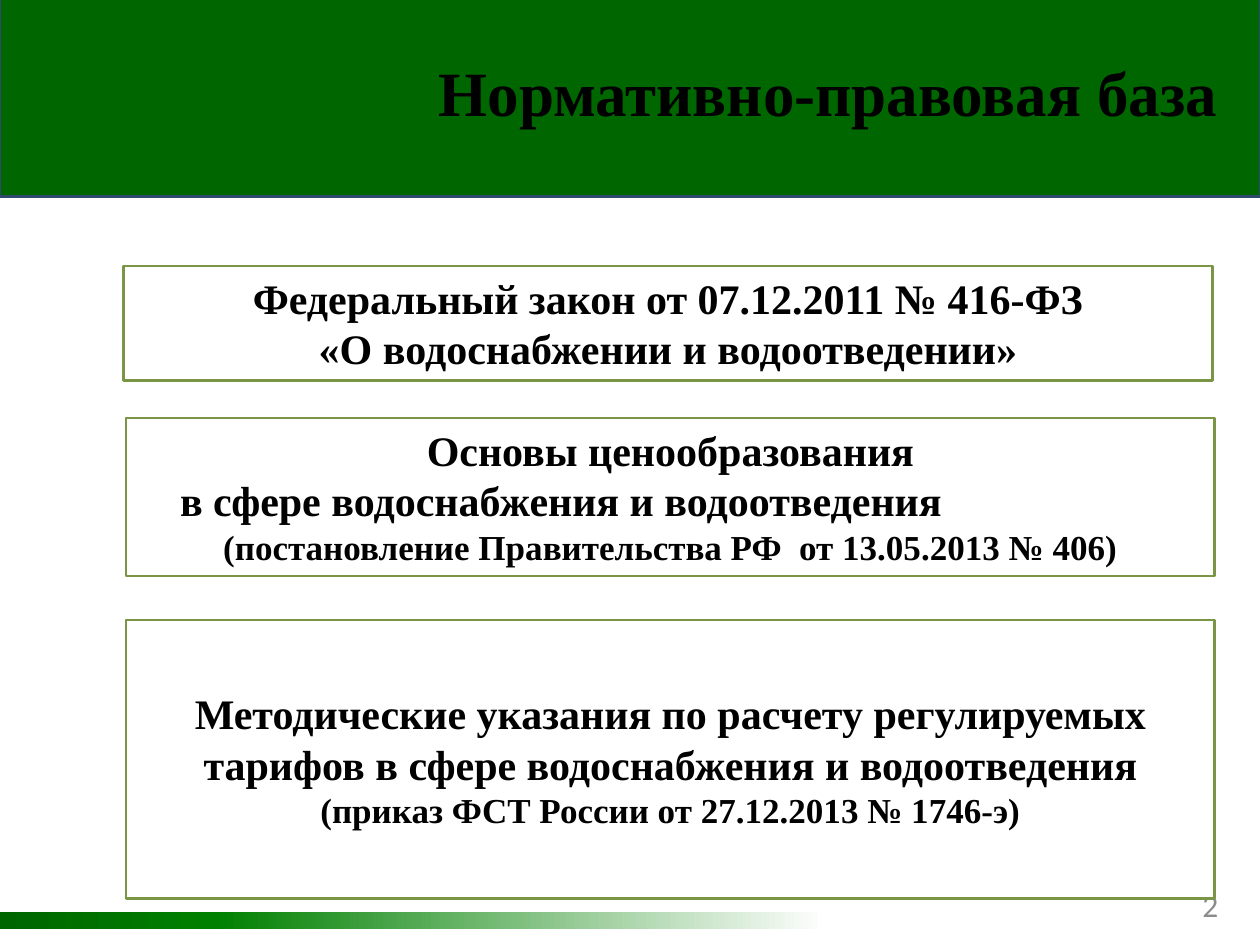
import copy

import pptx
import pptx.dml.color
import pptx.enum.shapes
import pptx.enum.text
import pptx.oxml.ns
import pptx.util

Cm, Pt = pptx.util.Cm, pptx.util.Pt
RGBColor = pptx.dml.color.RGBColor
ALIGN = pptx.enum.text.PP_ALIGN
ANCHOR = pptx.enum.text.MSO_ANCHOR

BLACK = RGBColor(0x00, 0x00, 0x00)
WHITE = RGBColor(0xFF, 0xFF, 0xFF)
GREY = RGBColor(0x8C, 0x8C, 0x8C)
DARK_GREEN = RGBColor(0x00, 0x66, 0x00)
GREEN = RGBColor(0x00, 0x80, 0x00)
OLIVE = RGBColor(0x7B, 0x95, 0x47)
NAVY = RGBColor(0x2E, 0x4B, 0x6F)

SERIF = {"name": "Times New Roman", "bold": True}
TITLE = {**SERIF, "size": Pt(36)}
MAIN = {**SERIF, "size": Pt(24)}
SOURCE = {**SERIF, "size": Pt(20)}
NUMBER = {"name": "Calibri", "size": Pt(18), "bold": False}

# Each act: box in cm, anchor, paragraphs of (indent in cm or None, runs)
ACTS = [
    ((2.54, 8.43, 21.95, 3.18), ANCHOR.TOP, [
        (None, [("Основы ценообразования", MAIN)]),
        (0.84, [("в сфере водоснабжения и водоотведения", MAIN)]),
        (None, [("(постановление Правительства РФ  от 13.05.2013 № 406)", SOURCE)]),
    ]),
    ((2.49, 5.36, 21.95, 2.31), ANCHOR.TOP, [
        (None, [("Федеральный закон от 07.12.2011 № 416-ФЗ", MAIN)]),
        (None, [("«О водоснабжении и водоотведении»", MAIN)]),
    ]),
    ((2.54, 12.5, 21.95, 5.61), ANCHOR.MIDDLE, [
        (None, [("Методические указания по расчету регулируемых тарифов "
                 "в сфере водоснабжения и водоотведения ", MAIN),
                ("(приказ ФСТ России от 27.12.2013 № 1746-э)", SOURCE)]),
    ]),
]


def add_run(paragraph, text, font, color=BLACK):
    run = paragraph.add_run()
    run.text = text
    for key, value in font.items():
        setattr(run.font, key, value)
    run.font.color.rgb = color


def add_panel(slide, box, fill, outline=None):
    """Add a flat rectangle, outlined only when a colour is given."""
    panel = slide.shapes.add_shape(
        pptx.enum.shapes.MSO_SHAPE.RECTANGLE, *map(Cm, box))
    panel.shadow.inherit = False
    panel.fill.solid()
    panel.fill.fore_color.rgb = fill
    if outline is None:
        panel.line.fill.background()
    else:
        panel.line.color.rgb = outline
        panel.line.width = Pt(1.5)
    return panel


def add_header(slide, box):
    """Place the green band with the title over its right part."""
    left, top, width, height = box
    add_panel(slide, box, DARK_GREEN, NAVY)
    title = slide.shapes.title
    title.left, title.top = Cm(left + 7.29), Cm(top + 0.82)
    title.width, title.height = Cm(18.8), Cm(2.21)
    frame = title.text_frame
    frame.word_wrap = True
    frame.vertical_anchor = ANCHOR.MIDDLE
    frame.paragraphs[0].alignment = ALIGN.CENTER
    add_run(frame.paragraphs[0], "Нормативно-правовая база", TITLE)
    title.element.getparent().append(title.element)  # in front of the band


def add_footer(slide, box):
    """Place the fading strip and the slide number."""
    left, top, width, height = box
    strip = add_panel(slide, (left, top + 0.66, 16.69, 0.33), DARK_GREEN)
    strip.fill.gradient()
    strip.fill.gradient_angle = 0
    first, last = strip.fill.gradient_stops
    first.color.rgb, last.color.rgb = GREEN, WHITE
    stops = strip.element.spPr.find(".//" + pptx.oxml.ns.qn("a:gsLst"))
    stops.insert(1, copy.deepcopy(stops[0]))
    first.color.rgb = DARK_GREEN
    strip.fill.gradient_stops[1].position = 0.26

    number = slide.shapes.add_textbox(
        Cm(left + width - 2.11), Cm(top), Cm(1.52), Cm(height))
    frame = number.text_frame
    frame.word_wrap = True
    frame.vertical_anchor = ANCHOR.MIDDLE
    frame.paragraphs[0].alignment = ALIGN.RIGHT
    add_run(frame.paragraphs[0], "2", NUMBER, GREY)


def add_act(slide, box, anchor, paragraphs):
    frame = add_panel(slide, box, WHITE, OLIVE).text_frame
    frame.word_wrap = True
    frame.vertical_anchor = anchor
    for index, (indent, runs) in enumerate(paragraphs):
        paragraph = frame.add_paragraph() if index else frame.paragraphs[0]
        paragraph.alignment = ALIGN.CENTER
        if indent is not None:
            paragraph.alignment = ALIGN.LEFT
            paragraph._p.get_or_add_pPr().set("marL", str(Cm(indent)))
        for text, font in runs:
            add_run(paragraph, text, font)


def main():
    deck = pptx.Presentation()
    deck.slide_width, deck.slide_height = Cm(25.4), Cm(19.05)
    slide = deck.slides.add_slide(deck.slide_layouts[5])
    add_header(slide, (0, -0.08, 25.4, 4.04))
    add_footer(slide, (0, 17.73, 25.4, 1.02))
    for box, anchor, paragraphs in ACTS:
        add_act(slide, box, anchor, paragraphs)
    deck.save("out.pptx")


if __name__ == "__main__":
    main()
